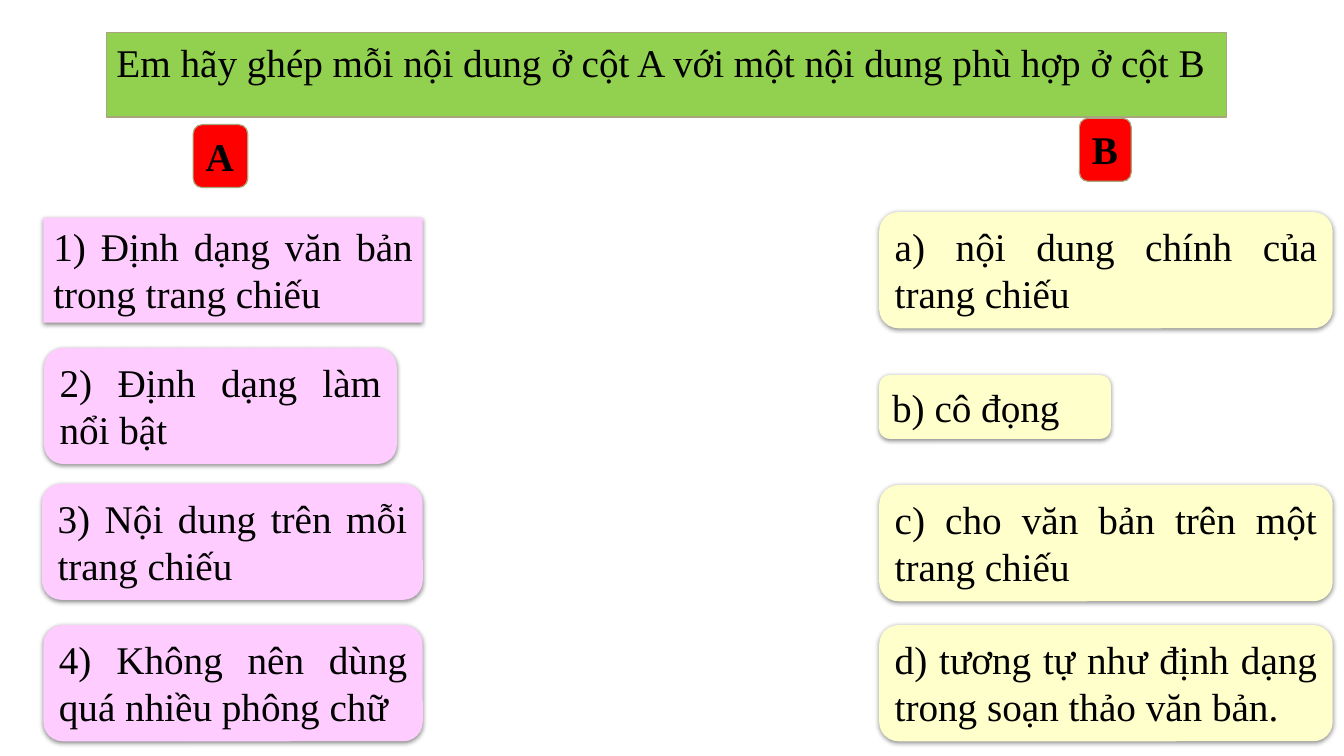
from dataclasses import dataclass

from lxml import etree
from pptx import Presentation
from pptx.dml.color import RGBColor
from pptx.enum import shapes, text
from pptx.oxml import ns
from pptx.util import Pt


@dataclass(frozen=True)
class Theme:
    font: str = "Times New Roman"
    size: float = 28
    ink: str = "000000"
    heading: str = "92D050"
    badge: str = "FF0000"
    border: str = "A9A57C"
    column_a: str = "FFCCFF"
    column_b: str = "FFFFCC"


THEME = Theme()
ROUNDED = shapes.MSO_SHAPE.ROUNDED_RECTANGLE
RECTANGLE = shapes.MSO_SHAPE.RECTANGLE

CARDS_A = [
    ("1) Định dạng văn bản trong trang chiếu", RECTANGLE, (31, 155.5, 271, 75)),
    ("2) Định dạng làm nổi bật", ROUNDED, (31.5, 248.5, 252, 83)),
    ("3) Nội dung trên mỗi trang chiếu", ROUNDED, (30, 345.5, 272, 83)),
    ("4) Không nên dùng quá nhiều phông chữ", ROUNDED, (31, 446.5, 271, 83)),
]
CARDS_B = [
    ("a) nội dung chính của trang chiếu", ROUNDED, (628, 151.5, 324, 83)),
    ("b) cô đọng", ROUNDED, (628, 268, 165.5, 45.5)),
    ("c) cho văn bản trên một trang chiếu", ROUNDED, (628, 346.5, 324, 83)),
    ("d) tương tự như định dạng trong soạn thảo văn bản.", ROUNDED, (628, 446.5, 324, 83)),
]


def apply(target, values):
    for name, value in values.items():
        setattr(target, name, value)


def color(value):
    return RGBColor.from_string(value)


def place(shape, box):
    apply(shape, dict(zip(("left", "top", "width", "height"), map(Pt, box))))


def paint(shape, fill, border=None):
    shape.fill.solid()
    shape.fill.fore_color.rgb = color(fill)
    if border:
        shape.line.color.rgb = color(border)
        shape.line.width = Pt(0.85)
    else:
        shape.line.fill.background()


def write(shape, words, alignment, wrap=True, bold=False):
    frame = shape.text_frame
    frame.text = words
    apply(frame, {
        "word_wrap": wrap,
        "auto_size": text.MSO_AUTO_SIZE.SHAPE_TO_FIT_TEXT,
        "vertical_anchor": text.MSO_ANCHOR.TOP,
    })
    paragraph = frame.paragraphs[0]
    paragraph.alignment = alignment
    font = paragraph.runs[0].font
    apply(font, {"name": THEME.font, "size": Pt(THEME.size), "bold": bold})
    font.color.rgb = color(THEME.ink)


def cast_shadow(shape):
    effects = shape.element.spPr.find(ns.qn("a:effectLst"))
    shadow = etree.SubElement(effects, ns.qn("a:outerShdw"), {
        "blurRad": str(Pt(3.5)), "dist": str(Pt(1.1)),
        "dir": "5400000", "rotWithShape": "0",
    })
    tint = etree.SubElement(shadow, ns.qn("a:srgbClr"), val="000000")
    etree.SubElement(tint, ns.qn("a:alpha"), val="45000")


def add_box(slide, kind, box, fill, border=None):
    shape = slide.shapes.add_shape(kind, *map(Pt, box))
    shape.shadow.inherit = False
    paint(shape, fill, border)
    return shape


def add_card(slide, words, kind, box, fill):
    shape = add_box(slide, kind, box, fill)
    cast_shadow(shape)
    write(shape, words, text.PP_ALIGN.JUSTIFY)


def add_badge(slide, letter, box):
    shape = add_box(slide, ROUNDED, box, THEME.badge, THEME.border)
    write(shape, letter, text.PP_ALIGN.JUSTIFY, wrap=False, bold=True)


def format_title(slide, words, box):
    title = slide.shapes.title
    place(title, box)
    geometry = etree.Element(ns.qn("a:prstGeom"), prst="roundRect")
    etree.SubElement(geometry, ns.qn("a:avLst"))
    title.element.spPr.insert(1, geometry)
    paint(title, THEME.heading, THEME.border)
    write(title, words, text.PP_ALIGN.LEFT, wrap=False)


def main():
    presentation = Presentation()
    apply(presentation, {"slide_width": Pt(960), "slide_height": Pt(540)})
    slide = presentation.slides.add_slide(presentation.slide_layouts[5])
    for cards, fill in ((CARDS_A, THEME.column_a), (CARDS_B, THEME.column_b)):
        for words, kind, box in cards:
            add_card(slide, words, kind, box, fill)
    format_title(
        slide,
        "Em hãy ghép mỗi nội dung ở cột A với một nội dung phù hợp ở cột B",
        (76, 23.5, 800, 45.5),
    )
    add_badge(slide, "A", (138, 89, 39, 45))
    add_badge(slide, "B", (771, 84.5, 37, 45))
    presentation.save("out.pptx")


if __name__ == "__main__":
    main()
